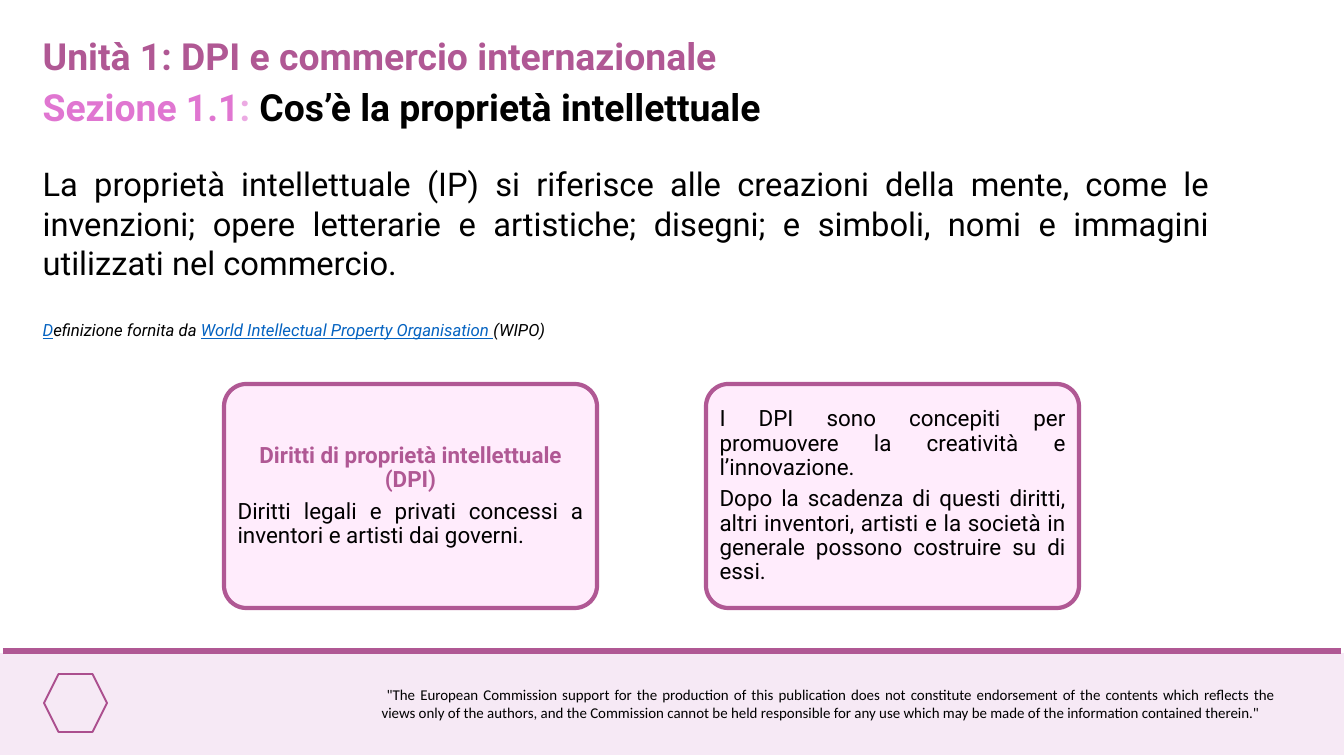
import pptx
import pptx.dml.color
import pptx.enum.shapes
import pptx.enum.text
import pptx.util

PX = 914400 / 67.2
ALIGN = pptx.enum.text.PP_ALIGN
ANCHOR = pptx.enum.text.MSO_ANCHOR
SHAPE = pptx.enum.shapes.MSO_SHAPE

BLACK = "000000"
PURPLE = "B05894"
LINK = "0563C1"


def px(*lengths):
    return [pptx.util.Emu(round(length * PX)) for length in lengths]


def color(hex_string):
    return pptx.dml.color.RGBColor.from_string(hex_string)


def add_text(paragraph, text, size, fill=BLACK, font="Roboto", bold=False, italic=False, underline=False):
    run = paragraph.add_run()
    run.text = text
    run.font.size = pptx.util.Pt(size)
    run.font.name = font
    run.font.bold = bold
    run.font.italic = italic
    run.font.underline = underline
    run.font.fill.solid()
    run.font.fill.fore_color.rgb = color(fill)


def prepare_frame(shape, anchor=ANCHOR.TOP, insets=None):
    frame = shape.text_frame
    frame.word_wrap = True
    frame.auto_size = pptx.enum.text.MSO_AUTO_SIZE.NONE
    frame.vertical_anchor = anchor
    if insets is not None:
        (inset,) = px(insets)
        frame.margin_left = frame.margin_right = inset
        frame.margin_top = frame.margin_bottom = inset
    return frame


def add_text_box(slide, left, top, width, height):
    return prepare_frame(slide.shapes.add_textbox(*px(left, top, width, height)))


def add_box(slide, kind, left, top, width, height, fill=None, line=None, line_width=1):
    shape = slide.shapes.add_shape(kind, *px(left, top, width, height))
    shape.shadow.inherit = False
    if fill:
        shape.fill.solid()
        shape.fill.fore_color.rgb = color(fill)
    else:
        shape.fill.background()
    if line:
        shape.line.color.rgb = color(line)
        shape.line.width = pptx.util.Pt(line_width)
    else:
        shape.line.fill.background()
    return shape


def add_rule(slide, left, right, top, fill, width):
    rule = slide.shapes.add_connector(
        pptx.enum.shapes.MSO_CONNECTOR.STRAIGHT, *px(left, top, right, top))
    rule.line.color.rgb = color(fill)
    rule.line.width = pptx.util.Pt(width)
    rule._element.spPr.append(pptx.oxml.xmlchemy.OxmlElement("a:effectLst"))


def add_footer(slide):
    add_box(slide, SHAPE.RECTANGLE, 0, 653, 1344, 102, fill="F6E9F5")
    add_rule(slide, 3, 1341, 651, PURPLE, 6.75)
    add_box(slide, SHAPE.HEXAGON, 44, 674, 63, 58, line="AB4E8E", line_width=2)
    paragraph = add_text_box(slide, 375, 682, 907, 43).paragraphs[0]
    paragraph.alignment = ALIGN.JUSTIFY
    add_text(paragraph, " \"The European Commission support for the production of this publication "
             "does not constitute endorsement of the contents which reflects the views only of the "
             "authors, and the Commission cannot be held responsible for any use which may be made "
             "of the information contained therein.\"", 16, font="Calibri")


def add_headings(slide):
    title = slide.shapes.title
    title.left, title.top, title.width, title.height = px(36, 30, 1000, 52)
    paragraph = prepare_frame(title).paragraphs[0]
    paragraph.alignment = ALIGN.LEFT
    add_text(paragraph, "Unità 1: DPI e commercio internazionale", 40, PURPLE, bold=True)

    paragraph = add_text_box(slide, 36, 81, 1000, 52).paragraphs[0]
    for text, fill in (("Sezione 1.1", "E076D1"), (": ", "ECAAE3"),
                       ("Cos’è la proprietà intellettuale", BLACK)):
        add_text(paragraph, text, 40, fill, bold=True)


def add_definition(slide):
    frame = add_text_box(slide, 36, 161, 1181, 185)
    definition = frame.paragraphs[0]
    definition.alignment = ALIGN.JUSTIFY
    add_text(definition, "La proprietà intellettuale (IP) si riferisce alle creazioni della mente, "
             "come le invenzioni; opere letterarie e artistiche; disegni; e simboli, nomi e "
             "immagini utilizzati nel commercio.", 35)

    credit = frame.add_paragraph()
    credit.alignment = ALIGN.JUSTIFY
    credit.space_before = pptx.util.Pt(41)
    for text, linked in (("D", True), ("efinizione fornita da ", False),
                         ("World Intellectual Property Organisation ", True), ("(WIPO)", False)):
        add_text(credit, text, 18, LINK if linked else BLACK, italic=True, underline=linked)


def add_card(slide, left, heading, texts):
    card = add_box(slide, SHAPE.ROUNDED_RECTANGLE, left, 384, 373, 224, "FFECFC", PURPLE, 4.5)
    card.adjustments[0] = 0.1
    frame = prepare_frame(card, ANCHOR.MIDDLE, insets=7)
    entries = [(heading, ALIGN.CENTER, PURPLE, True)] if heading else []
    entries += [(text, ALIGN.JUSTIFY, BLACK, False) for text in texts]
    for index, (text, alignment, fill, bold) in enumerate(entries):
        paragraph = frame.add_paragraph() if index else frame.paragraphs[0]
        paragraph.alignment = alignment
        paragraph.line_spacing = 0.9
        paragraph.space_after = pptx.util.Pt(8)
        add_text(paragraph, text, 24, fill, bold=bold)


def main():
    presentation = pptx.Presentation()
    presentation.slide_width, presentation.slide_height = px(1344, 756)
    slide = presentation.slides.add_slide(presentation.slide_layouts[5])
    add_footer(slide)
    add_headings(slide)
    add_definition(slide)
    add_card(slide, 224, "Diritti di proprietà intellettuale (DPI)",
             ["Diritti legali e privati concessi a inventori e artisti dai governi."])
    add_card(slide, 706, None,
             ["I DPI sono concepiti per promuovere la creatività e l’innovazione.",
              "Dopo la scadenza di questi diritti, altri inventori, artisti e la società in "
              "generale possono costruire su di essi."])
    presentation.save("out.pptx")


if __name__ == "__main__":
    main()
